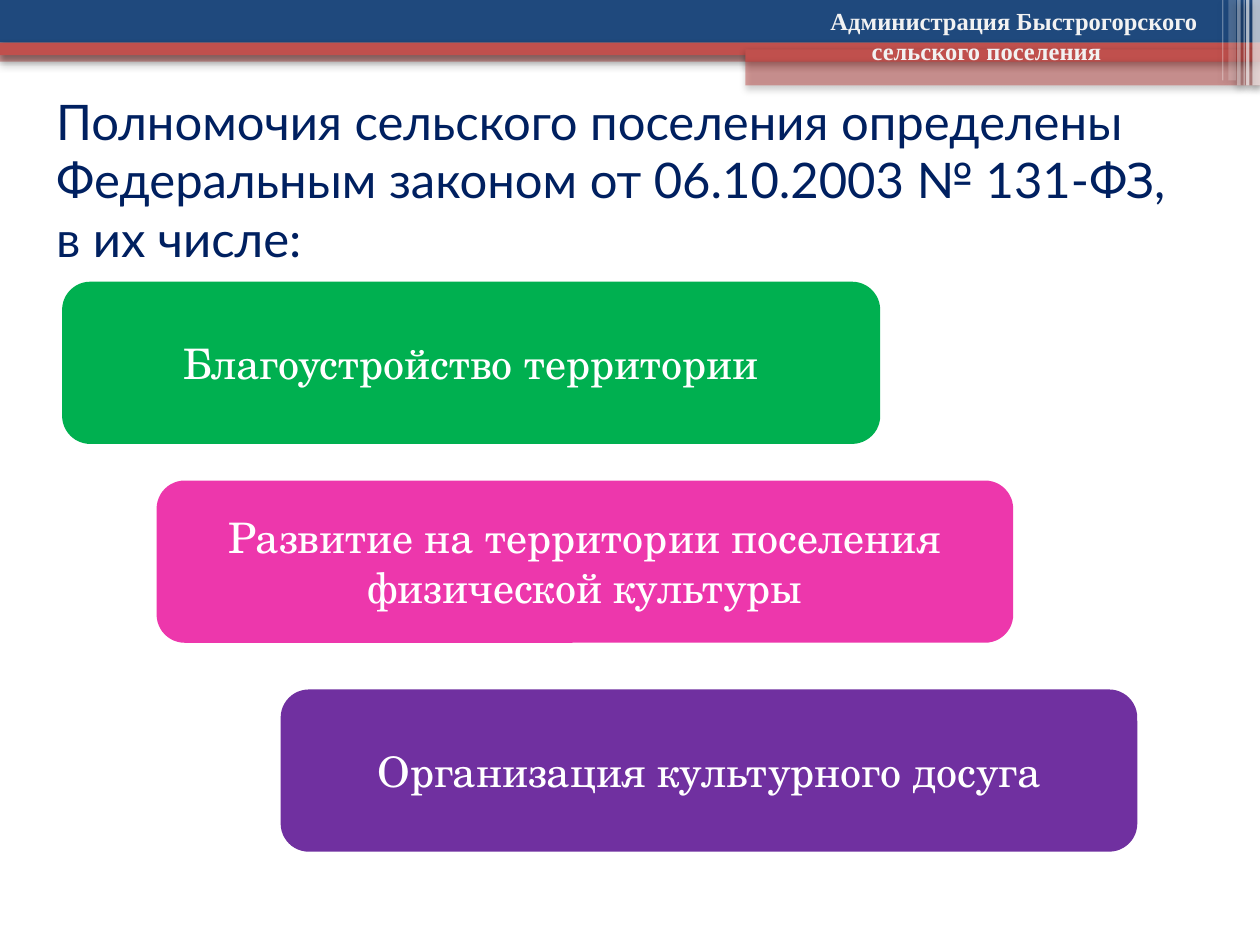
from pptx import Presentation
from pptx.dml.color import RGBColor
from pptx.enum.shapes import MSO_SHAPE
from pptx.enum.text import MSO_ANCHOR, PP_ALIGN
from pptx.oxml import parse_xml
from pptx.oxml.ns import nsdecls, qn
from pptx.util import Pt

RECT, ROUND = MSO_SHAPE.RECTANGLE, MSO_SHAPE.ROUNDED_RECTANGLE
LEFT, CENTER = PP_ALIGN.LEFT, PP_ALIGN.CENTER
TOP, MIDDLE = MSO_ANCHOR.TOP, MSO_ANCHOR.MIDDLE
NAVY, RED, WHITE = "1F497D", "C0504D", "FFFFFF"
SHADOW = (
    f'<a:outerShdw {nsdecls("a")} blurRad="{Pt(4.1)}" dist="{Pt(2)}" dir="5400000"'
    ' rotWithShape="0"><a:srgbClr val="000000"><a:alpha val="40000"/>'
    "</a:srgbClr></a:outerShdw>"
)


def color(code):
    return RGBColor.from_string(code)


def write(frame, text, font, size, ink, bold=False, align=CENTER, anchor=MIDDLE):
    frame.word_wrap = True
    frame.vertical_anchor = anchor
    for i, line in enumerate(text.split("\n")):
        para = frame.paragraphs[0] if i == 0 else frame.add_paragraph()
        para.alignment = align
        run = para.add_run()
        run.text = line
        run.font.name, run.font.size, run.font.bold = font, Pt(size), bold
        run.font.color.rgb = color(ink)


class Page:
    body = "TeX Gyre Schola"
    head = "Lato"
    label = "Times New Roman"

    def __init__(self, deck):
        self.shapes = deck.slides.add_slide(deck.slide_layouts[6]).shapes

    def shape(self, kind, box, fill):
        item = self.shapes.add_shape(kind, *map(Pt, box))
        item.fill.solid()
        item.fill.fore_color.rgb = color(fill)
        item.shadow.inherit = False
        return item

    def band(self, box, fill, alpha=100):
        """Add a shadowed bar without outline; alpha is opacity in percent."""
        bar = self.shape(RECT, box, fill)
        bar.line.fill.background()
        props = bar._element.spPr
        props.find(qn("a:effectLst")).append(parse_xml(SHADOW))
        if alpha < 100:
            tint = props.find(qn("a:solidFill"))[0]
            tint.append(parse_xml(f'<a:alpha {nsdecls("a")} val="{alpha * 1000}"/>'))

    def card(self, box, fill, text):
        item = self.shape(ROUND, box, fill)
        item.line.color.rgb = color(fill)
        item.line.width = Pt(2)
        write(item.text_frame, text, self.body, 24, WHITE)

    def text(self, box, text, **style):
        frame = self.shapes.add_textbox(*map(Pt, box)).text_frame
        write(frame, text, **style)
        return frame


def main():
    deck = Presentation()
    deck.slide_width, deck.slide_height = Pt(720), Pt(540)
    page = Page(deck)

    # Header bands: left, top, width, height
    page.band((0, 28.8, 720, 6.5), RED, 50)
    page.band((0, 0, 720, 24.4), NAVY)
    page.band((0, 24.4, 720, 7.2), RED)
    page.band((426, 28.2, 294, 7), RED)
    page.band((426, 34.6, 294, 14.2), RED, 50)

    # Stripes at the right end: left, width, height, opacity
    for left, width, high, alpha in (
        (715.7, 4.3, 48.8, 66),
        (712, 2, 48.8, 66),
        (710.6, 0.7, 48.8, 60),
        (707, 2, 48.8, 40),
        (702, 4.3, 46, 20),
        (698.4, 0.7, 46, 31),
    ):
        page.band((left, 0, width, high), WHITE, alpha)

    page.text(
        (25, 60.5, 648, 84),
        "Полномочия сельского поселения определены Федеральным законом "
        "от 06.10.2003 № 131-ФЗ, в их числе:",
        font=page.head, size=28, ink="002060", align=LEFT,
    )

    for left, top, width, fill, text in (
        (36.5, 162, 465.5, "00B050", "Благоустройство территории"),
        (90.5, 275.6, 487.5, "ED37AC",
         "Развитие на территории поселения физической культуры"),
        (161.4, 395, 487.5, "7030A0", "Организация культурного досуга"),
    ):
        page.card((left, top, width, 90.7), fill, text)

    label = page.text(
        (422, 0, 283.5, 40),
        "Администрация Быстрогорского\nсельского поселения",
        font=page.label, size=14, ink="F2F2F2", bold=True, anchor=TOP,
    )
    # The first line sits right of the second one's centre
    label.paragraphs[0]._p.get_or_add_pPr().set("marL", str(Pt(31.5)))

    deck.save("out.pptx")


if __name__ == "__main__":
    main()
